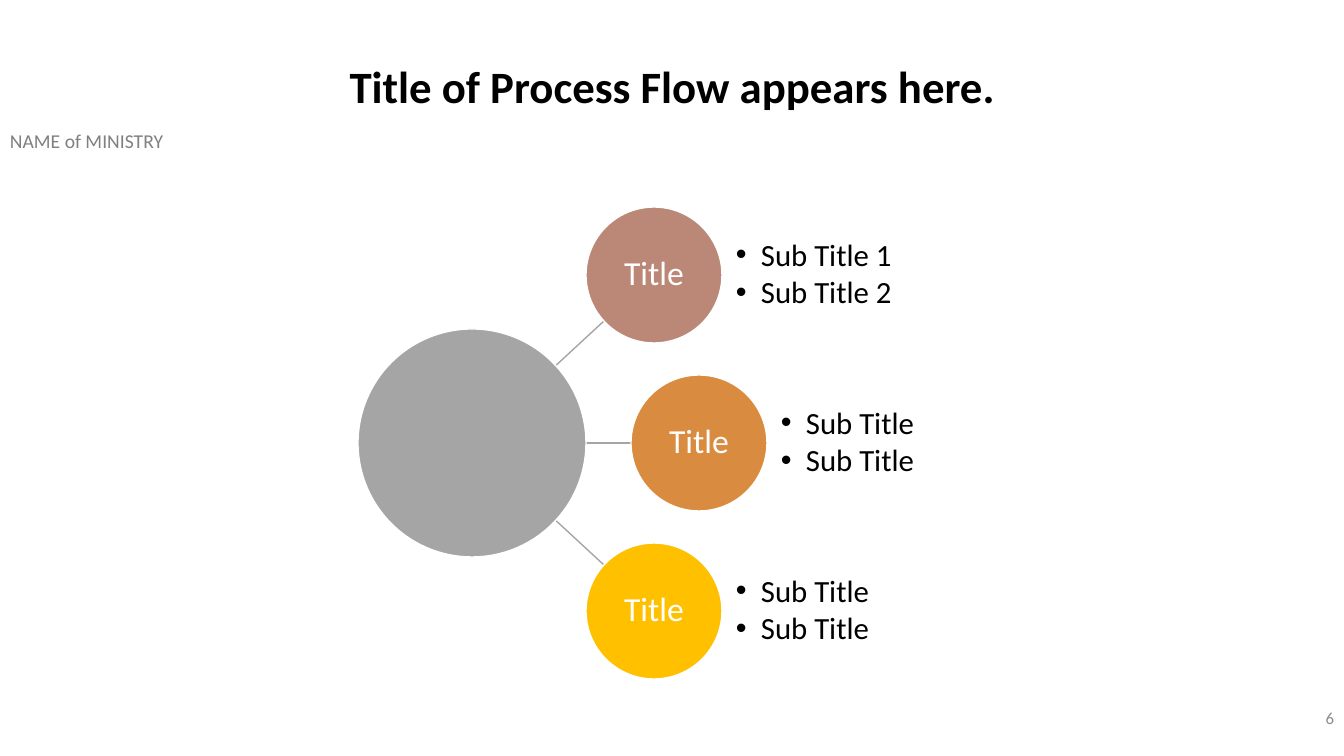
from lxml.etree import SubElement
from pptx import Presentation
from pptx.dml.color import RGBColor
from pptx.enum.shapes import MSO_CONNECTOR, MSO_SHAPE
from pptx.enum.text import MSO_ANCHOR, PP_ALIGN
from pptx.oxml.ns import qn
from pptx.util import Emu, Pt

PX = 914400 / 100.8
FONT = "Calibri"
BLACK = RGBColor(0x00, 0x00, 0x00)
WHITE = RGBColor(0xFF, 0xFF, 0xFF)
GRAY = RGBColor(0xA5, 0xA5, 0xA5)
HEADER_GRAY = RGBColor(0x80, 0x80, 0x80)
NUMBER_GRAY = RGBColor(0x8C, 0x8C, 0x8C)
ROSE = RGBColor(0xBB, 0x87, 0x76)
ORANGE = RGBColor(0xD9, 0x8B, 0x3F)
YELLOW = RGBColor(0xFF, 0xC0, 0x00)

CENTER_Y = 443
HUB_CENTER_X, HUB_SIZE = 472, 228
NODE_SIZE, NODE_STEP = 136, 168
# Row offset from the middle, left edge of the circle, fill, sub titles
BRANCHES = [
    (-1, 586, ROSE, ["Sub Title 1", "Sub Title 2"]),
    (0, 631, ORANGE, ["Sub Title", "Sub Title"]),
    (1, 586, YELLOW, ["Sub Title", "Sub Title"]),
]


def px(length):
    return Emu(round(length * PX))


class SlideBuilder:
    def __init__(self, slide):
        self.slide = slide

    def fill_paragraph(self, paragraph, text, size, color, align=PP_ALIGN.LEFT, bold=False,
                       spacing=1.0):
        paragraph.text = text
        paragraph.alignment = align
        paragraph.line_spacing = spacing
        font = paragraph.font
        font.name, font.size, font.bold = FONT, Pt(size), bold
        font.color.rgb = color

    def frame(self, shape, anchor, inset_x, inset_y):
        frame = shape.text_frame
        frame.word_wrap = True
        frame.vertical_anchor = anchor
        frame.margin_left = frame.margin_right = px(inset_x)
        frame.margin_top = frame.margin_bottom = px(inset_y)
        return frame

    def label(self, box, text, size, color, anchor=MSO_ANCHOR.TOP, **style):
        shape = self.slide.shapes.add_textbox(*map(px, box))
        frame = self.frame(shape, anchor, 10, 5)
        self.fill_paragraph(frame.paragraphs[0], text, size, color, **style)

    def bullets(self, box, items):
        shape = self.slide.shapes.add_textbox(*map(px, box))
        frame = self.frame(shape, MSO_ANCHOR.MIDDLE, 0, 0)
        for index, item in enumerate(items):
            paragraph = frame.add_paragraph() if index else frame.paragraphs[0]
            properties = paragraph._p.get_or_add_pPr()
            properties.set("marL", str(px(25)))
            properties.set("indent", str(-px(25)))
            SubElement(properties, qn("a:buFont"), typeface="Arial")
            SubElement(properties, qn("a:buChar"), char="•")
            self.fill_paragraph(paragraph, item, 22, BLACK, spacing=0.9)
            paragraph.space_after = Pt(3.3)

    def circle(self, left, top, size, fill, text=""):
        shape = self.slide.shapes.add_shape(MSO_SHAPE.OVAL, *map(px, (left, top, size, size)))
        shape.shadow.inherit = False
        shape.fill.solid()
        shape.fill.fore_color.rgb = fill
        shape.line.color.rgb = WHITE
        shape.line.width = Pt(1)
        if text:
            frame = self.frame(shape, MSO_ANCHOR.MIDDLE, 2, 2)
            self.fill_paragraph(frame.paragraphs[0], text, 24, WHITE, PP_ALIGN.CENTER,
                                spacing=0.9)

    def line(self, *ends):
        connector = self.slide.shapes.add_connector(MSO_CONNECTOR.STRAIGHT, *map(px, ends))
        connector.line.color.rgb = GRAY
        connector.line.width = Pt(1)
        SubElement(connector._element.spPr, qn("a:effectLst"))


def main():
    presentation = Presentation()
    presentation.slide_width, presentation.slide_height = px(1344), px(756)
    builder = SlideBuilder(presentation.slides.add_slide(presentation.slide_layouts[6]))

    builder.label((0, 124, 292, 34), "NAME of MINISTRY", 14, HEADER_GRAY)

    for row, left, _, _ in BRANCHES:
        end_x = left + 18 if row else left
        builder.line(551, CENTER_Y + row * 73, end_x, CENTER_Y + row * 122)

    builder.circle(HUB_CENTER_X - HUB_SIZE // 2, CENTER_Y - HUB_SIZE // 2, HUB_SIZE, GRAY)
    for row, left, fill, items in BRANCHES:
        top = CENTER_Y + row * NODE_STEP - NODE_SIZE // 2
        builder.circle(left, top, NODE_SIZE, fill, "Title")
        builder.bullets((left + 150, top, 205, NODE_SIZE), items)

    builder.label((1041, 698, 303, 40), "6", 12, NUMBER_GRAY, MSO_ANCHOR.MIDDLE,
                  align=PP_ALIGN.RIGHT)
    builder.label((330, 60, 685, 108), "Title of Process Flow appears here.", 32, BLACK,
                  align=PP_ALIGN.CENTER, bold=True, spacing=0.9)
    presentation.save("out.pptx")


if __name__ == "__main__":
    main()
